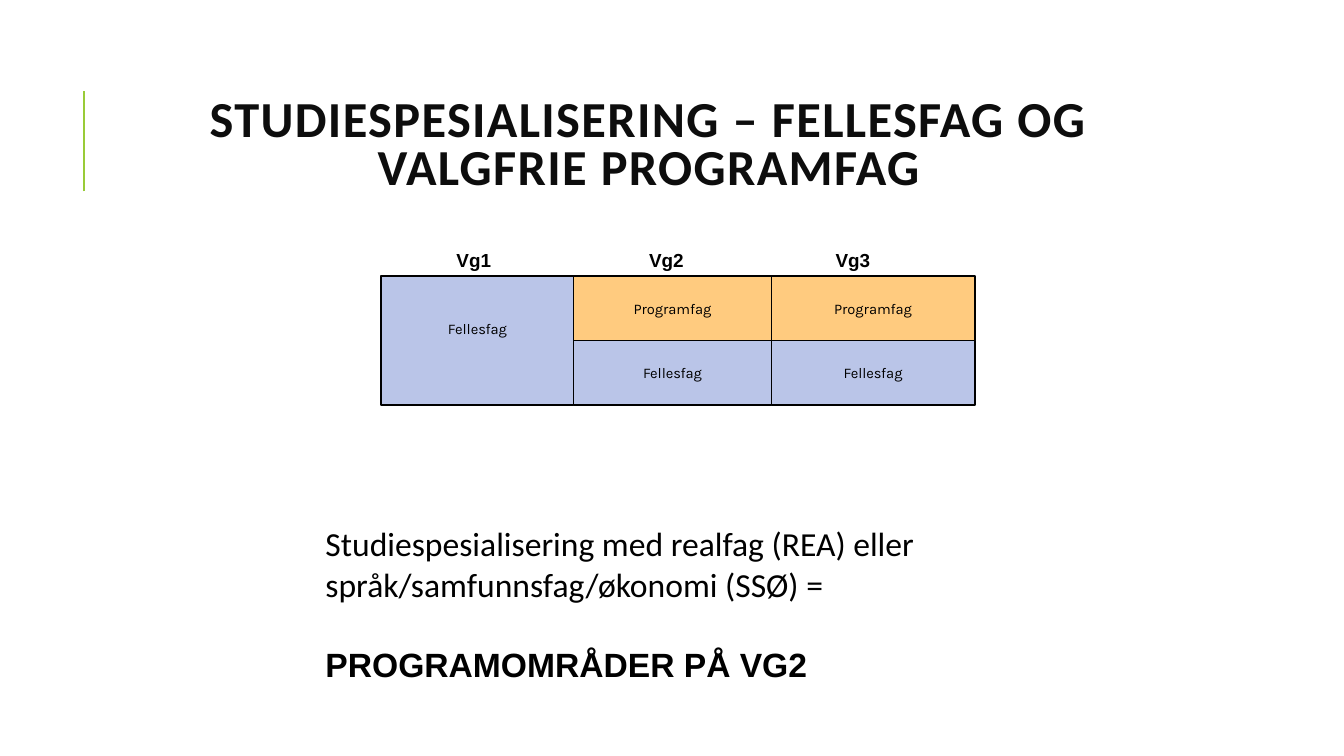
from dataclasses import dataclass
from itertools import accumulate

from lxml.etree import SubElement
from pptx import Presentation
from pptx.dml.color import RGBColor
from pptx.enum.shapes import MSO_CONNECTOR, MSO_SHAPE
from pptx.enum.text import MSO_ANCHOR, PP_ALIGN
from pptx.oxml.ns import qn
from pptx.shapes.autoshape import Shape
from pptx.slide import Slide
from pptx.text.text import _Paragraph as Paragraph
from pptx.util import Inches, Length, Pt

BLACK = RGBColor(0x00, 0x00, 0x00)
TITLE_INK = RGBColor(0x0D, 0x0D, 0x0D)
GREEN = RGBColor(0x99, 0xCB, 0x38)
ORANGE = RGBColor(0xFF, 0x99, 0x00)
LAVENDER = RGBColor(0xBA, 0xC5, 0xE8)

SLIDE_WIDTH = Inches(13.33)
SLIDE_HEIGHT = Inches(7.5)

# Grid of the school years, in percent of the slide's width and height
COLUMN_EDGES = list(accumulate([28.36, 14.33, 14.7, 15.15]))
ROW_TOP = 36.53
ROW_HEIGHT = 8.53


@dataclass(frozen=True)
class Box:
    """Place and size in percent of the slide."""
    left: float
    top: float
    width: float
    height: float


@dataclass(frozen=True)
class TextStyle:
    font: str
    size: float
    bold: bool = False
    color: RGBColor = BLACK
    spacing: float = 0


@dataclass(frozen=True)
class Subject:
    name: str
    column: int
    row: int
    row_span: int = 1
    fill: RGBColor = LAVENDER
    opacity: int = 100
    bottom_inset: float = 0.05


@dataclass(frozen=True)
class YearLabel:
    text: str
    left: float


TITLE_STYLE = TextStyle("Calibri", 36, True, TITLE_INK, spacing=1)
SUBJECT_STYLE = TextStyle("Karla", 10.5)
YEAR_STYLE = TextStyle("Arial", 13.5, True)
BODY_STYLE = TextStyle("Calibri", 24)
CONCLUSION_STYLE = TextStyle("Arial", 24, True)

SUBJECTS = [
    Subject("Programfag", 1, 0, fill=ORANGE, opacity=50),
    Subject("Programfag", 2, 0, fill=ORANGE, opacity=50),
    Subject("Fellesfag", 1, 1),
    Subject("Fellesfag", 2, 1),
    Subject("Fellesfag", 0, 0, row_span=2, bottom_inset=0.28),
]
YEARS = [YearLabel("Vg1", 33.23), YearLabel("Vg2", 47.56), YearLabel("Vg3", 61.44)]


def across(percent: float) -> Length:
    return Length(round(SLIDE_WIDTH * percent / 100))


def down(percent: float) -> Length:
    return Length(round(SLIDE_HEIGHT * percent / 100))


def place(box: Box) -> tuple[Length, Length, Length, Length]:
    return across(box.left), down(box.top), across(box.width), down(box.height)


def add_run(paragraph: Paragraph, text: str, style: TextStyle) -> None:
    run = paragraph.add_run()
    run.text = text
    run.font.name = style.font
    run.font.size = Pt(style.size)
    run.font.bold = style.bold
    run.font.color.rgb = style.color
    if style.spacing:
        run.font._element.set("spc", str(round(style.spacing * 100)))


def add_text(slide: Slide, box: Box, text: str, style: TextStyle, wrap: bool = True) -> Shape:
    shape = slide.shapes.add_textbox(*place(box))
    shape.text_frame.word_wrap = wrap
    add_run(shape.text_frame.paragraphs[0], text, style)
    return shape


def add_title(slide: Slide) -> None:
    title = add_text(slide, Box(8.4, 8.53, 79.74, 21.87),
                     "STUDIESPESIALISERING – FELLESFAG OG VALGFRIE PROGRAMFAG", TITLE_STYLE)
    title.text_frame.vertical_anchor = MSO_ANCHOR.MIDDLE
    paragraph = title.text_frame.paragraphs[0]
    paragraph.alignment = PP_ALIGN.CENTER
    paragraph.line_spacing = 0.8


def add_title_rule(slide: Slide) -> None:
    rule = slide.shapes.add_connector(MSO_CONNECTOR.STRAIGHT, across(6.23), down(25.33),
                                      across(6.23), down(12))
    rule.line.color.rgb = GREEN
    rule.line.width = Pt(1.5)
    SubElement(rule._element.spPr, qn("a:effectLst"))


def add_subject(slide: Slide, subject: Subject) -> None:
    left, right = COLUMN_EDGES[subject.column:subject.column + 2]
    box = Box(left, ROW_TOP + subject.row * ROW_HEIGHT,
              right - left, subject.row_span * ROW_HEIGHT)
    shape = slide.shapes.add_shape(MSO_SHAPE.RECTANGLE, *place(box))
    shape.shadow.inherit = False
    shape.fill.solid()
    shape.fill.fore_color.rgb = subject.fill
    if subject.opacity < 100:
        color = shape._element.spPr.find(qn("a:solidFill")).find(qn("a:srgbClr"))
        SubElement(color, qn("a:alpha")).set("val", str(subject.opacity * 1000))
    shape.line.color.rgb = BLACK
    shape.line.width = Pt(1)
    frame = shape.text_frame
    frame.vertical_anchor = MSO_ANCHOR.MIDDLE
    frame.margin_bottom = Inches(subject.bottom_inset)
    frame.paragraphs[0].alignment = PP_ALIGN.CENTER
    add_run(frame.paragraphs[0], subject.name, SUBJECT_STYLE)


def add_body(slide: Slide) -> None:
    body = add_text(slide, Box(23.48, 57.73, 53.04, 42.27),
                    "Studiespesialisering med realfag (REA) eller "
                    "språk/samfunnsfag/økonomi (SSØ) =", BODY_STYLE)
    body.text_frame.margin_top = Inches(0.86)
    conclusion = body.text_frame.add_paragraph()
    conclusion.space_before = Pt(29)
    add_run(conclusion, "PROGRAMOMRÅDER PÅ VG2", CONCLUSION_STYLE)


def main() -> None:
    presentation = Presentation()
    presentation.slide_width = SLIDE_WIDTH
    presentation.slide_height = SLIDE_HEIGHT
    slide = presentation.slides.add_slide(presentation.slide_layouts[6])
    add_title_rule(slide)
    add_title(slide)
    for subject in SUBJECTS:
        add_subject(slide, subject)
    for year in YEARS:
        add_text(slide, Box(year.left, 32.27, 4.13, 4.4), year.text, YEAR_STYLE, wrap=False)
    add_body(slide)
    presentation.save("out.pptx")


if __name__ == "__main__":
    main()
